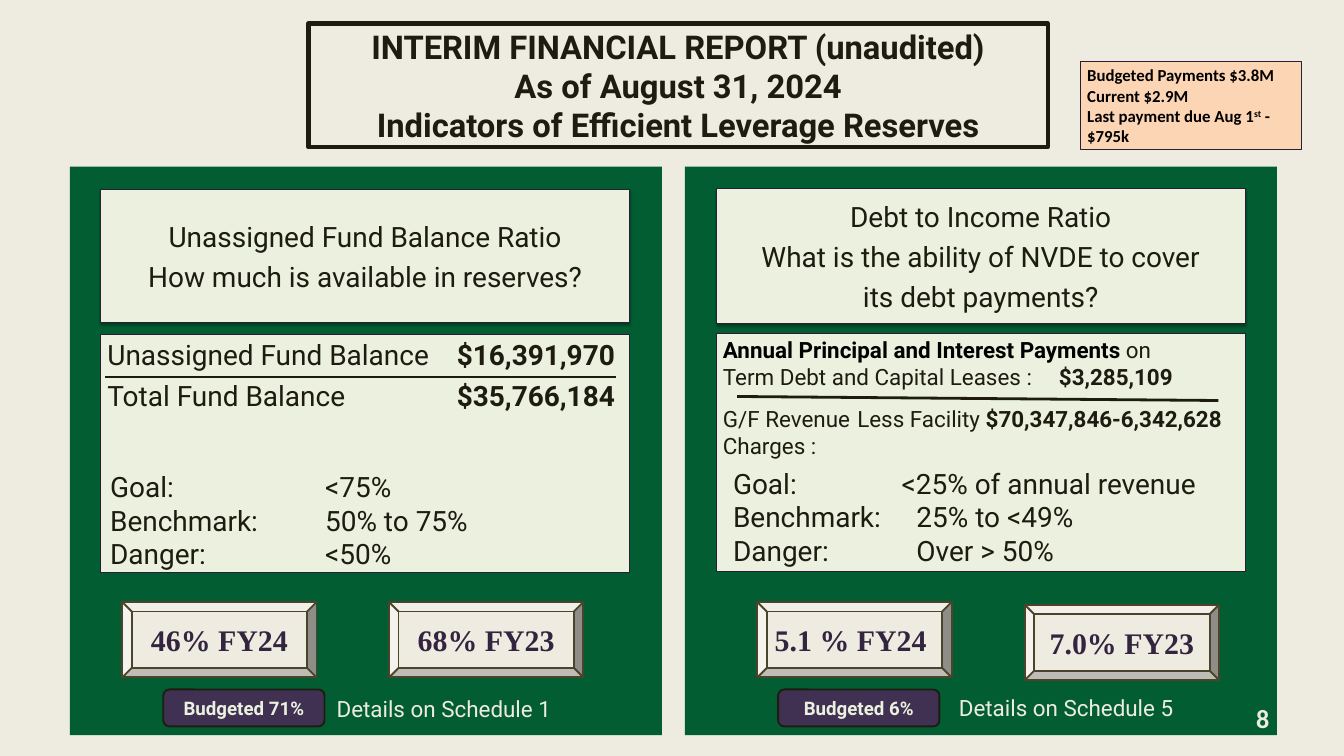
from dataclasses import dataclass
from typing import Optional

from lxml import etree
from pptx import Presentation
from pptx.dml.color import RGBColor
from pptx.enum.shapes import MSO_CONNECTOR, MSO_SHAPE
from pptx.enum.text import MSO_ANCHOR, MSO_AUTO_SIZE, PP_ALIGN
from pptx.oxml.ns import qn
from pptx.util import Inches, Pt

RECTANGLE, BEVEL, ROUNDED = MSO_SHAPE.RECTANGLE, MSO_SHAPE.BEVEL, MSO_SHAPE.ROUNDED_RECTANGLE
STRAIGHT = MSO_CONNECTOR.STRAIGHT
TOP, MIDDLE = MSO_ANCHOR.TOP, MSO_ANCHOR.MIDDLE
LEFT, CENTER, RIGHT = PP_ALIGN.LEFT, PP_ALIGN.CENTER, PP_ALIGN.RIGHT

COLORS = {
    "page": "EEECE1", "panel": "025E32", "card": "EBF1DE", "ink": "1E1C11",
    "edge": "291F35", "bevel_edge": "4A452A", "bevel_text": "332440",
    "badge": "403152", "note": "FCD5B5", "black": "000000",
}


@dataclass
class Span:
    text: str
    bold: Optional[bool] = None
    color: Optional[str] = None
    raised: bool = False


@dataclass
class Para:
    spans: list[Span]
    tab: float = 0  # inches from the text edge
    before: float = 0  # points


@dataclass
class Style:
    size: float
    color: str = "ink"
    font: str = "Roboto"
    bold: bool = False
    align: PP_ALIGN = LEFT
    anchor: MSO_ANCHOR = TOP
    margin: Optional[float] = None
    grow: bool = False


@dataclass
class Look:
    fill: Optional[str] = None
    line: Optional[str] = None
    width: float = 0.75
    shadow: bool = False


@dataclass
class Panel:
    left: float
    question: list[Para]
    question_box: tuple
    figures: list[Para]
    figures_size: float
    figures_top: float
    rule: tuple
    goals: list[Para]
    goals_box: tuple
    results: list[tuple]  # text, left, top
    budget: str
    budget_left: float
    details: str
    details_box: tuple


def rgb(name: str) -> RGBColor:
    return RGBColor.from_string(COLORS[name])


def lines(*texts: str, before: float = 0) -> list[Para]:
    return [Para([Span(text)], before=before if i else 0) for i, text in enumerate(texts)]


def write(shape, paras: list[Para], style: Style) -> None:
    frame = shape.text_frame
    frame.word_wrap = True
    frame.vertical_anchor = style.anchor
    if style.grow:
        frame.auto_size = MSO_AUTO_SIZE.SHAPE_TO_FIT_TEXT
    if style.margin is not None:
        frame.margin_left = frame.margin_right = Inches(style.margin)
        frame.margin_top = frame.margin_bottom = Inches(style.margin)
    for i, item in enumerate(paras):
        para = frame.add_paragraph() if i else frame.paragraphs[0]
        para.alignment = style.align
        para.space_before = Pt(item.before)
        if item.tab:
            tabs = etree.SubElement(para._p.get_or_add_pPr(), qn("a:tabLst"))
            etree.SubElement(tabs, qn("a:tab"), pos=str(Inches(item.tab)), algn="l")
        for part in item.spans:
            span = para.add_run()
            span.text = part.text
            span.font.name = style.font
            span.font.size = Pt(style.size)
            span.font.bold = style.bold if part.bold is None else part.bold
            span.font.color.rgb = rgb(part.color or style.color)
            if part.raised:
                span._r.get_or_add_rPr().set("baseline", "30000")


def add_box(page, kind, place: tuple, look: Look, paras=None, style=None) -> None:
    box = page.shapes.add_shape(kind, *map(Inches, place))
    box.shadow.inherit = False
    if look.fill:
        box.fill.solid()
        box.fill.fore_color.rgb = rgb(look.fill)
    else:
        box.fill.background()
    if look.line:
        box.line.color.rgb = rgb(look.line)
        box.line.width = Pt(look.width)
    else:
        box.line.fill.background()
    if look.shadow:
        effects = box._element.spPr.find(qn("a:effectLst"))
        outer = etree.SubElement(effects, qn("a:outerShdw"), blurRad=str(Pt(3.1)),
                                 dist=str(Pt(1.8)), dir="5400000", rotWithShape="0")
        tone = etree.SubElement(outer, qn("a:srgbClr"), val=COLORS["black"])
        etree.SubElement(tone, qn("a:alpha"), val="35000")
    if paras:
        write(box, paras, style)


def add_text(page, place: tuple, paras: list[Para], style: Style) -> None:
    write(page.shapes.add_textbox(*map(Inches, place)), paras, style)


def add_rule(page, ends: tuple) -> None:
    rule = page.shapes.add_connector(STRAIGHT, *map(Inches, ends))
    rule.line.color.rgb = rgb("ink")
    rule.line.width = Pt(3)
    etree.SubElement(rule._element.spPr, qn("a:effectLst"))


CARD = Look("card", "edge")
QUESTION = Style(30, align=CENTER, anchor=MIDDLE)
RESULT = Style(32, "bevel_text", "Times New Roman", True, CENTER, MIDDLE)
BADGE = Style(20, "card", bold=True, align=CENTER, anchor=MIDDLE)


def draw_panel(page, panel: Panel) -> None:
    add_box(page, RECTANGLE, (panel.left, 2.48, 8.81, 8.46), Look("panel"))
    # Question and figures
    add_box(page, RECTANGLE, panel.question_box, Look("card", "edge", shadow=True),
            panel.question, QUESTION)
    add_box(page, RECTANGLE, (panel.question_box[0], panel.figures_top, 7.87, 3.54), CARD,
            panel.figures, Style(panel.figures_size))
    add_rule(page, panel.rule)
    add_text(page, panel.goals_box, panel.goals, Style(30, grow=True))
    # Results, budget and reference
    for text, left, top in panel.results:
        add_box(page, BEVEL, (left, top, 2.89, 1.12), Look("page", "bevel_edge", 2),
                lines(text), RESULT)
    add_box(page, ROUNDED, (panel.budget_left, 10.26, 2.4, 0.55), Look("badge", "ink", 2),
            lines(panel.budget), BADGE)
    add_text(page, panel.details_box, lines(panel.details), Style(24, "page", grow=True))


PANELS = [
    Panel(
        1.04,
        lines("Unassigned Fund Balance Ratio", "How much is available in reserves?", before=7),
        (1.5, 2.82, 7.87, 1.98),
        [Para([Span("Unassigned Fund Balance\t"), Span("$16,391,970", True)], 5.2),
         Para([Span("Total Fund Balance\t"), Span("$35,766,184", True)], 5.2, 7)],
        30, 4.98, (1.57, 5.61, 9.16, 5.61),
        [Para([Span(text)], 3.2)
         for text in ("Goal:\t<75%", "Benchmark:\t50% to 75%", "Danger:\t<50%")],
        (1.54, 6.94, 7.87, 1.62),
        [("46% FY24", 1.82, 8.96), ("68% FY23", 5.79, 8.96)],
        "Budgeted 71%", 2.43, "Details on Schedule 1", (4.91, 10.3, 3.48, 0.5)),
    Panel(
        10.19,
        lines("Debt to Income Ratio", "What is the ability of NVDE to cover",
              "its debt payments?", before=7),
        (10.66, 2.81, 7.87, 2),
        [Para([Span("Annual Principal and Interest Payments ", True, "black"), Span("on")]),
         Para([Span("Term Debt and Capital Leases :\t"), Span("$3,285,109", True)], 5),
         Para([Span("G/F Revenue\tLess Facility "), Span("$70,347,846-6,342,628", True)], 2, 16),
         Para([Span("Charges :")])],
        24, 4.96, (10.97, 5.9, 18.13, 5.96),
        [Para([Span("Goal:\t<25% of annual revenue")], 2.51),
         Para([Span("Benchmark:\t25% to <49%")], 2.73),
         Para([Span("Danger:\tOver > 50%")], 2.73)],
        (10.81, 6.89, 7.5, 1.62),
        [("5.1 % FY24 ", 11.27, 8.96), ("7.0% FY23", 15.25, 9)],
        "Budgeted 6%", 11.58, "Details on Schedule 5", (14.17, 10.28, 3.83, 0.5)),
]


def main() -> None:
    deck = Presentation()
    deck.slide_width, deck.slide_height = Inches(20), Inches(11.25)
    page = deck.slides.add_slide(deck.slide_layouts[6])
    page.background.fill.solid()
    page.background.fill.fore_color.rgb = rgb("page")

    # Title
    add_box(page, RECTANGLE, (4.59, 0.35, 11, 1.84), Look(None, "ink", 4.5),
            lines("INTERIM FINANCIAL REPORT (unaudited)", "As of August 31, 2024",
                  "Indicators of Efficient Leverage Reserves"),
            Style(35.1, bold=True, align=CENTER, anchor=MIDDLE, margin=0))
    for panel in PANELS:
        draw_panel(page, panel)

    # Page number and payment note
    add_text(page, (18.47, 10.45, 0.42, 0.47), lines("8"),
             Style(28, "page", "Calibri", True, RIGHT, margin=0, grow=True))
    note = lines("Budgeted Payments $3.8M", "Current $2.9M")
    note.append(Para([Span("Last payment due Aug 1"), Span("st", raised=True), Span(" - $795k")]))
    add_box(page, RECTANGLE, (16.08, 0.92, 3.29, 1.31), Look("note", "edge"), note,
            Style(18, "black", "Calibri", True, grow=True))
    deck.save("out.pptx")


if __name__ == "__main__":
    main()
